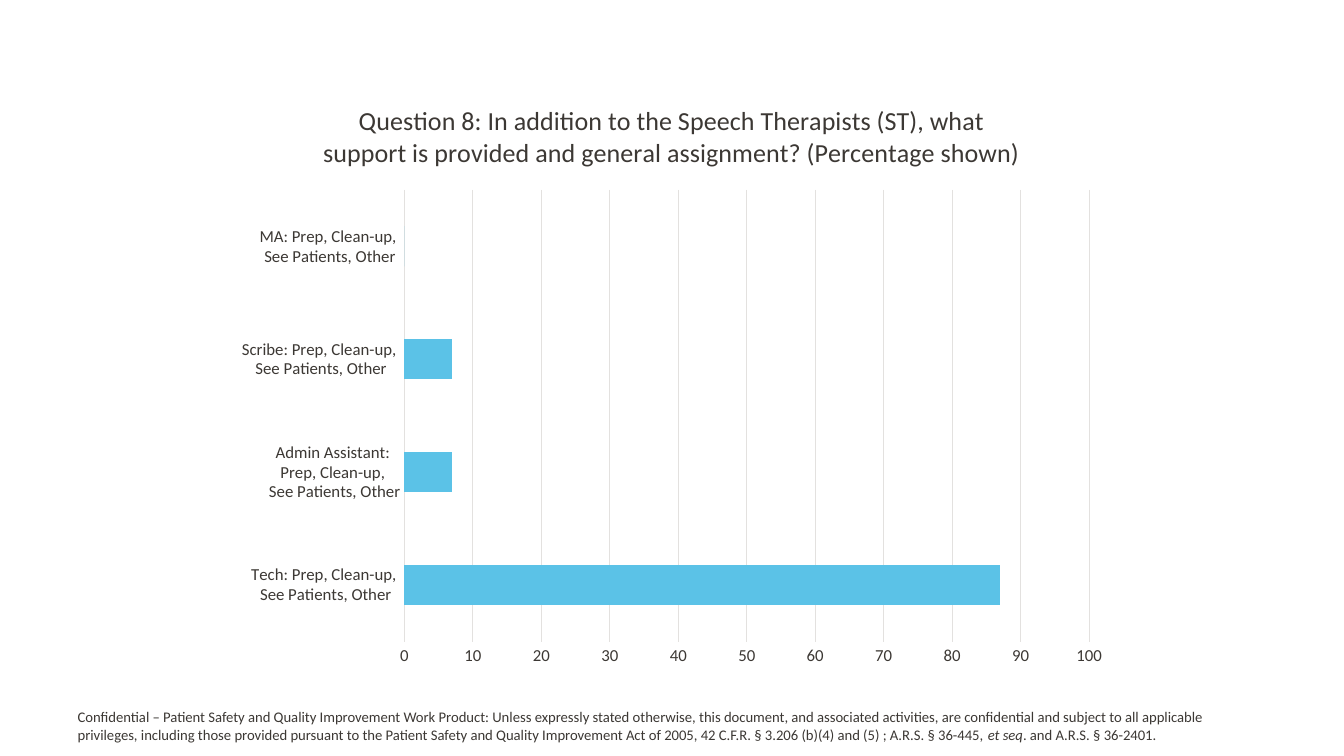
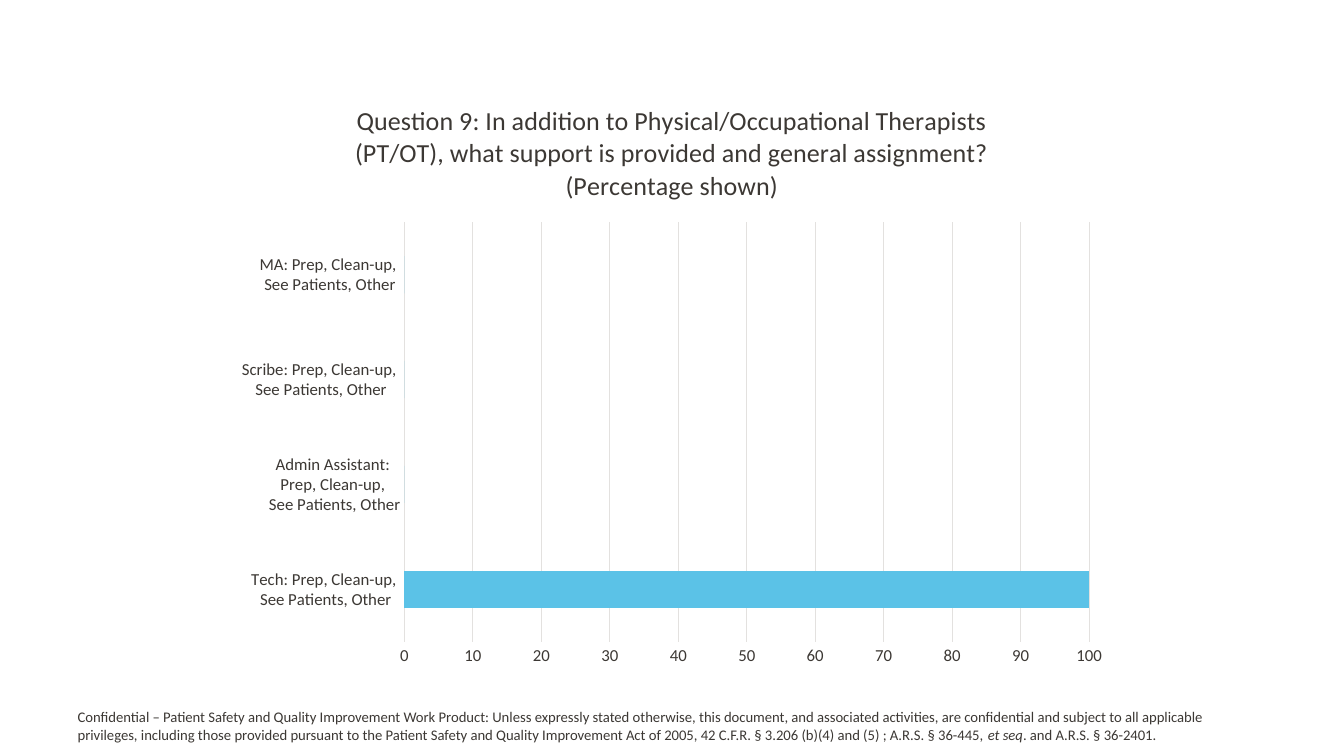
"""Build two survey slides, each with a bar chart and a confidentiality footer."""
import dataclasses

import pptx
import pptx.chart.data
import pptx.dml.color
import pptx.enum.chart
import pptx.enum.text
import pptx.util

Pt = pptx.util.Pt


@dataclasses.dataclass(frozen=True)
class Theme:
    """Colours, font and type sizes shared by the slides."""

    font: str = "Calibri"
    ink: str = "3C3834"
    grid: str = "E3E1DF"
    bar: str = "5BC2E7"
    title_size: float = 18.6
    axis_size: float = 12
    footer_size: float = 10.5
    chart_size: float = 10
    line_width: float = 0.75


THEME = Theme()

DUTIES = "See Patients, Other"
CATEGORIES = [
    f"Tech: Prep, Clean-up, \n{DUTIES}",
    f"Admin Assistant: \nPrep, Clean-up, \n{DUTIES}",
    f"Scribe: Prep, Clean-up, \n{DUTIES}",
    f"MA: Prep, Clean-up, \n{DUTIES}",
]

QUESTIONS = [
    (
        "Question 8: In addition to the Speech Therapists (ST), what support is "
        "provided and general assignment? (Percentage shown)",
        (87, 7, 7, 0),
    ),
    (
        "Question 9: In addition to Physical/Occupational Therapists (PT/OT), what "
        "support is provided and general assignment? (Percentage shown)",
        (100, 0, 0, 0),
    ),
]

FOOTER = [
    (
        "Confidential – Patient Safety and Quality Improvement Work Product: Unless "
        "expressly stated otherwise, this document, and associated activities, are "
        "confidential and subject to all applicable privileges, including those "
        "provided pursuant to the Patient Safety and Quality Improvement Act of 2005, "
        "42 C.F.R. § 3.206 (b)(4) and (5) ; A.R.S. § 36-445, ",
        False,
    ),
    ("et seq", True),
    (". and A.R.S. § 36-2401.", False),
]


def rgb(value):
    """Return the colour for a hex string."""
    return pptx.dml.color.RGBColor.from_string(value)


def format_font(font, size, italic=False):
    """Apply the theme face and ink to a font."""
    font.name = THEME.font
    font.size = Pt(size)
    font.bold = False
    font.italic = italic
    font.color.rgb = rgb(THEME.ink)


def add_text(p, text, **style):
    """Add a formatted run of text to a paragraph."""
    r = p.add_run()
    r.text = text
    format_font(r.font, **style)


def format_line(line):
    """Draw a line in the pale grid style."""
    line.color.rgb = rgb(THEME.grid)
    line.width = Pt(THEME.line_width)


def format_axis(axis):
    """Remove tick marks and set the label font of an axis."""
    axis.major_tick_mark = pptx.enum.chart.XL_TICK_MARK.NONE
    axis.minor_tick_mark = pptx.enum.chart.XL_TICK_MARK.NONE
    format_font(axis.tick_labels.font, THEME.axis_size)


def add_bar_chart(s, title, values):
    """Add a titled horizontal bar chart of percentages."""
    data = pptx.chart.data.CategoryChartData()
    data.categories = CATEGORIES
    data.add_series("Series 1", values)
    chart = s.shapes.add_chart(
        pptx.enum.chart.XL_CHART_TYPE.BAR_CLUSTERED,
        Pt(160), Pt(57), Pt(640), Pt(427), data,
    ).chart
    format_font(chart.font, THEME.chart_size)
    chart.has_legend = False
    chart.has_title = True
    chart.chart_title.include_in_layout = False
    p = chart.chart_title.text_frame.paragraphs[0]
    add_text(p, title, size=THEME.title_size)

    plot = chart.plots[0]
    plot.gap_width = 182
    plot.vary_by_categories = False
    fill = plot.series[0].format.fill
    fill.solid()
    fill.fore_color.rgb = rgb(THEME.bar)

    format_axis(chart.category_axis)
    format_line(chart.category_axis.format.line)
    axis = chart.value_axis
    format_axis(axis)
    axis.minimum_scale, axis.maximum_scale, axis.major_unit = 0, 100, 10
    axis.format.line.fill.background()
    axis.has_major_gridlines = True
    format_line(axis.major_gridlines.format.line)


def add_footer(s):
    """Add the confidentiality statement along the bottom edge."""
    tf = s.shapes.add_textbox(Pt(48.4), Pt(502), Pt(844.6), Pt(32.4)).text_frame
    tf.word_wrap = True
    tf.auto_size = pptx.enum.text.MSO_AUTO_SIZE.SHAPE_TO_FIT_TEXT
    for text, italic in FOOTER:
        add_text(tf.paragraphs[0], text, size=THEME.footer_size, italic=italic)


def main():
    """Build and save the presentation."""
    prs = pptx.Presentation()
    prs.slide_width, prs.slide_height = Pt(960), Pt(540)
    for title, values in QUESTIONS:
        s = prs.slides.add_slide(prs.slide_layouts[6])
        add_bar_chart(s, title, values)
        add_footer(s)
    prs.save("out.pptx")


if __name__ == "__main__":
    main()
